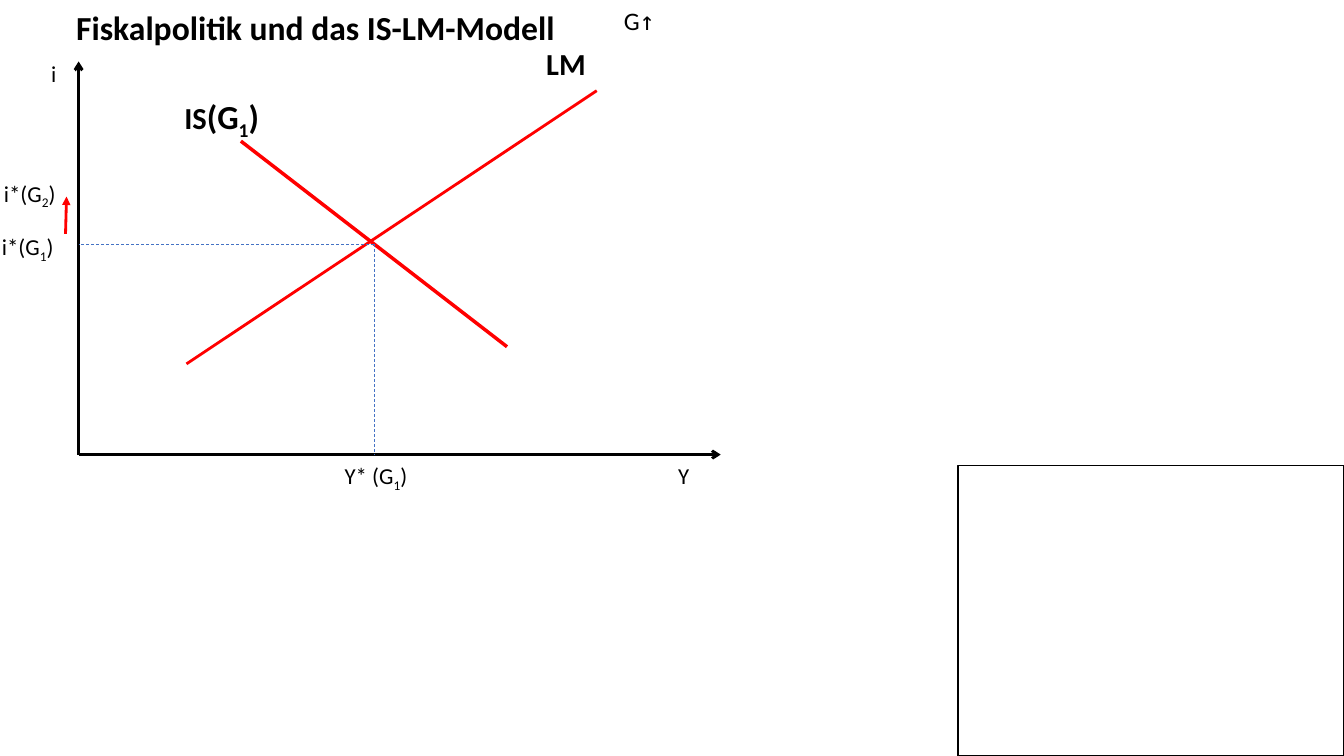
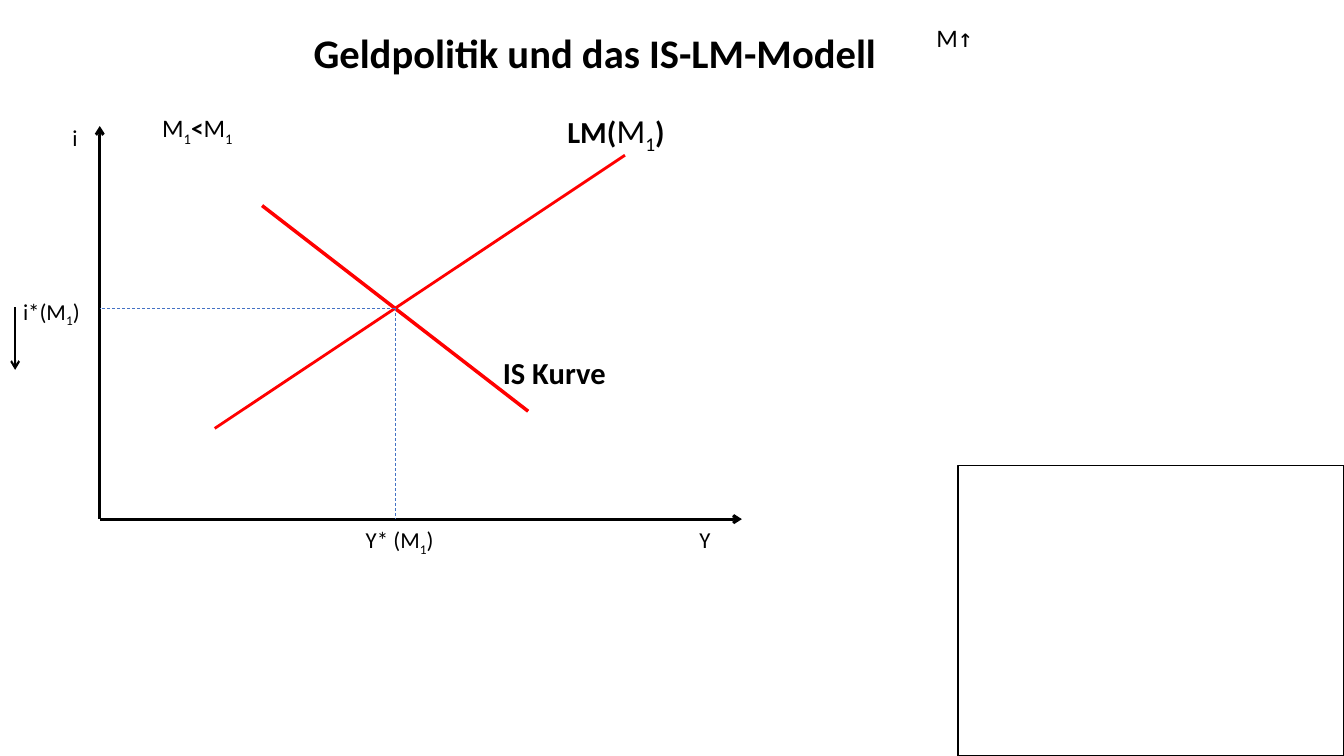
from lxml.etree import SubElement
from pptx import Presentation
from pptx.dml.color import RGBColor
from pptx.enum.dml import MSO_LINE
from pptx.enum.shapes import MSO_CONNECTOR, MSO_SHAPE
from pptx.enum.text import MSO_ANCHOR, MSO_AUTO_SIZE, PP_ALIGN
from pptx.oxml.ns import qn
from pptx.util import Inches, Pt

# The grid has square cells, ten to the inch.
CELL = Inches(0.1)
COLS, ROWS = 133.33, 75
BLACK, RED, BLUE = "000000", "FF0000", "4472C4"
FACE, GLYPH = "Calibri", "DejaVu Sans Mono"
SMALL, NOTE, CURVE, BIG = 16.3, 18, 21.8, 24


def cells(*counts):
    return [round(n * CELL) for n in counts]


def shift(base, col, row):
    return base[0] + col, base[1] + row


def color(code):
    return RGBColor.from_string(code)


def style(font, size=None, bold=None, face=None):
    if size:
        font.size = Pt(size)
    if bold is not None:
        font.bold = bold
    if face:
        font.name = face


def write(par, runs, size, bold):
    """Fill a paragraph; a run is text or (text, font changes), "_" toggles subscript."""
    style(par.font, size, bold, FACE)
    par.font.color.rgb = color(BLACK)
    for item in runs:
        text, change = (item, {}) if isinstance(item, str) else item
        for count, part in enumerate(text.split("_")):
            if not part:
                continue
            run = par.add_run()
            run.text = part
            style(run.font, **change)
            if count % 2:
                run._r.get_or_add_rPr().set("baseline", "-25000")


def label(slide, spot, size, *runs, bold=False, wrap=False):
    """Place a text box; size is its width and height in cells."""
    box = slide.shapes.add_textbox(*cells(*spot, *size))
    frame = box.text_frame
    frame.word_wrap = wrap
    frame.auto_size = MSO_AUTO_SIZE.SHAPE_TO_FIT_TEXT
    return frame, frame.paragraphs[0], runs, bold


def text(slide, spot, size, points, *runs, bold=False, wrap=False):
    frame, par, runs, bold = label(slide, spot, size, *runs, bold=bold, wrap=wrap)
    write(par, runs, points, bold)
    return frame


def title(slide, spot, size, points, words):
    frame = text(slide, spot, size, points, words, bold=True, wrap=True)
    frame.auto_size = MSO_AUTO_SIZE.NONE
    frame.vertical_anchor = MSO_ANCHOR.MIDDLE
    frame.margin_left = frame.margin_right = Inches(0.09)
    frame.margin_top = frame.margin_bottom = Inches(0.04)
    frame.paragraphs[0].alignment = PP_ALIGN.CENTER


def line(slide, start, end, code, width, head=None, dash=False):
    link = slide.shapes.add_connector(MSO_CONNECTOR.STRAIGHT, *cells(*start, *end))
    link.line.color.rgb = color(code)
    link.line.width = Pt(width)
    if dash:
        link.line.dash_style = MSO_LINE.DASH
    if head:
        SubElement(link.line._get_or_add_ln(), qn("a:tailEnd"), type=head)
    SubElement(link._element.spPr, qn("a:effectLst"))


def frame_box(slide):
    """Draw the empty box in the lower right corner."""
    width, height = 38.3, 28.8
    box = slide.shapes.add_shape(
        MSO_SHAPE.RECTANGLE, *cells(COLS - width, ROWS - height, width, height))
    box.shadow.inherit = False
    box.fill.background()
    box.line.color.rgb = color(BLACK)
    box.line.width = Pt(1)


def model(slide, base, sign, wide, move=0):
    """Draw axes, curves and equilibrium from base; move shifts the LM curve."""
    def place(col, row):
        return shift(base, col, row)

    for end in ((0, -39), (63.7, 0)):
        line(slide, base, place(*end), BLACK, 2, "arrow")
    line(slide, place(10.7 + move, -9), place(51.4 + move, -36.1), RED, 2)
    line(slide, place(16.1, -31.1), place(42.5, -10.7), RED, 2.5)
    for end in ((0, -20.9), (29.3, 0)):
        line(slide, place(29.3, -20.9), place(*end), BLUE, 0.5, dash=True)
    for spot, width, words in (
            ((-3.7, -39.7), 2.5, "i"),
            ((58.5, 0.2), 3.1, "Y"),
            ((25.4, 0.2), wide + 1.1, f"Y* ({sign}_1_)"),
            ((-8.6, -22.5), wide, f"i*({sign}_1_)")):
        text(slide, place(*spot), (width, 3.8), SMALL, words)


def policy(slide, spot, width, sign):
    """Name the policy: a letter and an upward arrow."""
    text(slide, spot, (width, 4), NOTE, sign, ("↑", {"face": GLYPH}), wrap=True)


def fiscal(slide):
    title(slide, (5.7, -0.3), (51.2, 5.9), BIG, "Fiskalpolitik und das IS-LM-Modell")
    model(slide, (7.8, 45.1), "G", 7.3)
    text(slide, (17.3, 9), (9.6, 5), BIG, ("IS", {"size": CURVE}), "(G_1_)", bold=True)
    text(slide, (53.2, 4), (6, 4.7), CURVE, "LM", bold=True)
    text(slide, (-0.6, 17.3), (7.3, 3.8), SMALL, "i*(G_2_)")
    policy(slide, (60.9, 0), 5.3, "G")
    line(slide, (6.5, 23.2), (6.6, 19.5), RED, 2, "triangle")
    frame_box(slide)


def money(slide):
    title(slide, (17.5, 1.1), (83.1, 8.1), 29, "Geldpolitik und das IS-LM-Modell")
    model(slide, (9.9, 51.5), "M", 7.8, 0.7)
    text(slide, (48.9, 34.6), (12.3, 4.7), CURVE, "IS Kurve", bold=True)
    text(slide, (55.3, 10.4), (11.9, 5), CURVE, "LM(",
         ("M_1_", {"size": BIG, "bold": False}), ")", bold=True)
    text(slide, (15.1, 10.7), (9.3, 4), NOTE, "M_1_", ("<", {"bold": True}), "M_1_")
    policy(slide, (91.9, 1.7), 6.3, "M")
    line(slide, (1.5, 30.5), (1.5, 36.7), BLACK, 1.5, "arrow")
    frame_box(slide)


def main():
    deck = Presentation()
    deck.slide_width, deck.slide_height = cells(COLS, ROWS)
    for draw in (fiscal, money):
        draw(deck.slides.add_slide(deck.slide_layouts[6]))
    deck.save("out.pptx")


if __name__ == "__main__":
    main()
